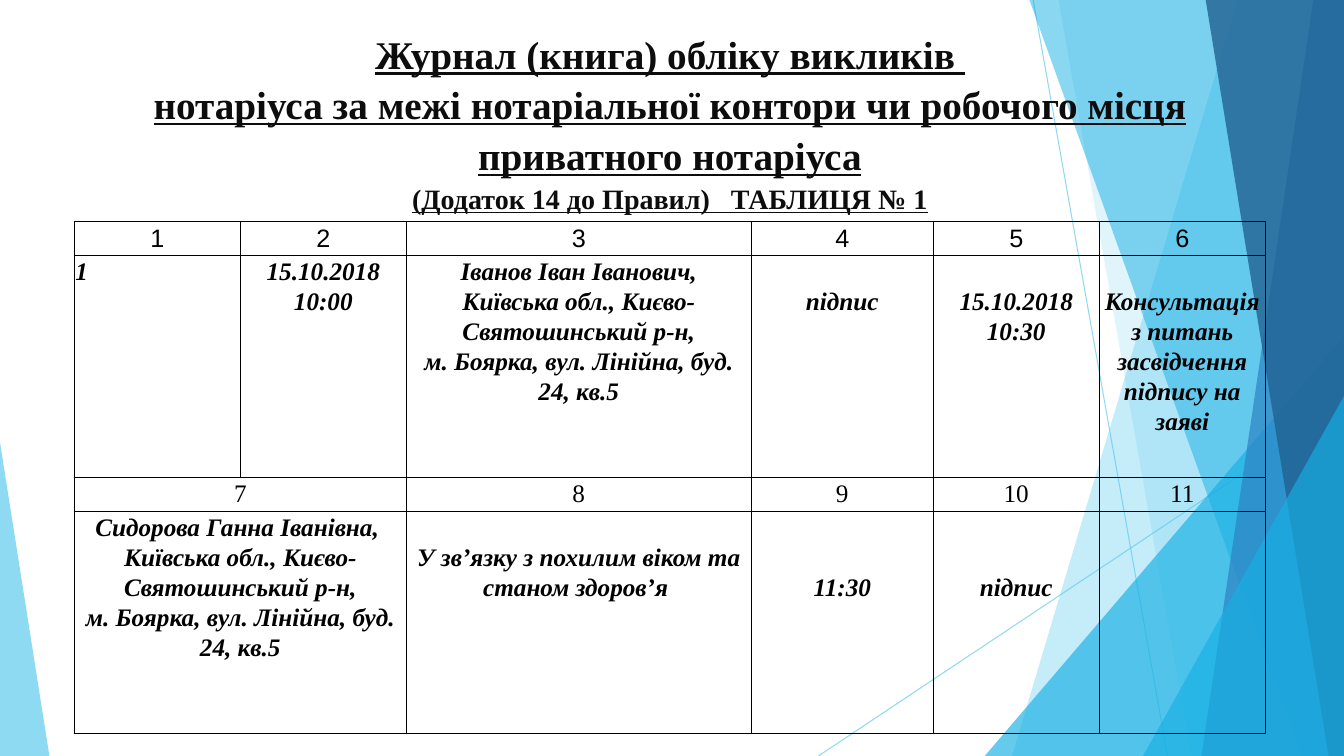
"""Build the notary call journal slide: a titled form table over layered facets."""
import dataclasses
import typing

import lxml.etree
import pptx
import pptx.dml.color
import pptx.enum.dml
import pptx.enum.shapes
import pptx.enum.text
import pptx.oxml.ns
import pptx.shapes.autoshape
import pptx.shapes.base
import pptx.slide
import pptx.table
import pptx.text.text
import pptx.util


@dataclasses.dataclass(frozen=True)
class Theme:
    ink: str = "000000"
    title_ink: str = "0D0D0D"
    sky: str = "5FCBEF"
    azure: str = "17B0E4"
    blue: str = "2E83C3"
    navy: str = "226292"
    serif: str = "Times New Roman"
    sans: str = "Arial"
    title_size: float = 28
    subtitle_size: float = 20
    cell_size: float = 18


class Ray(typing.NamedTuple):
    start: tuple[float, float]
    end: tuple[float, float]


class Facet(typing.NamedTuple):
    top_left: float
    bottom_left: float
    color: str
    opacity: int


class Corner(typing.NamedTuple):
    left: float
    top: float
    width: float
    apex: float
    color: str
    opacity: int


class Entry(typing.NamedTuple):
    row: int
    column: int
    text: str
    lines_above: int = 0


THEME = Theme()
PAGE_WIDTH, PAGE_HEIGHT = 960, 540
FACET_TOP = -0.72
TABLE_LEFT, TABLE_TOP = 53.1, 158.2
COLUMN_WIDTHS = (118.6, 118.6, 246.4, 130, 118.6, 118.6)
ROW_HEIGHTS = (24.3, 158.6) * 2
CELL_MARGIN = 0.72
CELL_LINE = 21.3

RAYS = [Ray((738, 0), (834, PAGE_HEIGHT)), Ray((PAGE_WIDTH, 290), (584.6, PAGE_HEIGHT))]
DECOR = [
    Facet(884.2, 722.9, THEME.sky, 36),
    Facet(756, 851, THEME.sky, 20),
    Corner(703.4, 240, 256.6, 1, THEME.azure, 66),
    Facet(735.1, 929.5, THEME.azure, 50),
    Facet(938.2, 858.2, THEME.blue, 70),
    Facet(861.1, 949, THEME.navy, 80),
    Corner(816.5, 283, 143.5, 1, THEME.azure, 66),
    Corner(0, 316, 35.3, 0, THEME.sky, 70),
]
TITLE = (
    "Журнал (книга) обліку викликів \n"
    "нотаріуса за межі нотаріальної контори чи робочого місця приватного нотаріуса\n"
    "(Додаток 14 до Правил)   ТАБЛИЦЯ № 1"
)
ADDRESS = "Київська обл., Києво-Святошинський р-н,\nм. Боярка, вул. Лінійна, буд. 24, кв.5"
HEADINGS = [Entry(0, column, str(column + 1)) for column in range(6)] + [
    Entry(2, column, str(number)) for column, number in zip((0, 2, 3, 4, 5), range(7, 12))
]
RECORDS = [
    Entry(1, 0, "1"),
    Entry(1, 1, "15.10.2018\n10:00"),
    Entry(1, 2, f"Іванов Іван Іванович,\n{ADDRESS}"),
    Entry(1, 3, "підпис", 1),
    Entry(1, 4, "15.10.2018\n10:30", 1),
    Entry(1, 5, "Консультація з питань засвідчення підпису на заяві", 1),
    Entry(3, 0, f"Сидорова Ганна Іванівна, \n{ADDRESS}"),
    Entry(3, 2, "У зв’язку з похилим віком та станом здоров’я ", 1),
    Entry(3, 3, "11:30", 2),
    Entry(3, 4, "підпис", 2),
]


def set_opacity(shape: pptx.shapes.base.BaseShape, percent: int) -> None:
    color = shape.element.spPr.find(".//" + pptx.oxml.ns.qn("a:srgbClr"))
    alpha = lxml.etree.SubElement(color, pptx.oxml.ns.qn("a:alpha"))
    alpha.set("val", str(percent * 1000))


def paint(shape: pptx.shapes.autoshape.Shape, color: str, opacity: int) -> None:
    shape.shadow.inherit = False
    shape.fill.solid()
    shape.fill.fore_color.rgb = pptx.dml.color.RGBColor.from_string(color)
    shape.line.fill.background()
    set_opacity(shape, opacity)


def draw_ray(page: pptx.slide.Slide, ray: Ray) -> None:
    ends = [pptx.util.Pt(value) for value in ray.start + ray.end]
    line = page.shapes.add_connector(pptx.enum.shapes.MSO_CONNECTOR.STRAIGHT, *ends)
    line.line.color.rgb = pptx.dml.color.RGBColor.from_string(THEME.sky)
    line.line.width = pptx.util.Pt(0.75)
    set_opacity(line, 70)
    lxml.etree.SubElement(line.element.spPr, pptx.oxml.ns.qn("a:effectLst"))


def draw_facet(page: pptx.slide.Slide, facet: Facet) -> None:
    outline = [(facet.top_left, FACET_TOP), (PAGE_WIDTH, FACET_TOP),
               (PAGE_WIDTH, PAGE_HEIGHT), (facet.bottom_left, PAGE_HEIGHT)]
    points = [(pptx.util.Pt(x), pptx.util.Pt(y)) for x, y in outline]
    builder = page.shapes.build_freeform(*points[0])
    builder.add_line_segments(points[1:], close=True)
    paint(builder.convert_to_shape(), facet.color, facet.opacity)


def draw_corner(page: pptx.slide.Slide, corner: Corner) -> None:
    shape = page.shapes.add_shape(
        pptx.enum.shapes.MSO_SHAPE.ISOSCELES_TRIANGLE,
        pptx.util.Pt(corner.left), pptx.util.Pt(corner.top),
        pptx.util.Pt(corner.width), pptx.util.Pt(PAGE_HEIGHT - corner.top))
    shape.adjustments[0] = corner.apex
    paint(shape, corner.color, corner.opacity)


def format_para(para: pptx.text.text._Paragraph, font_name: str, size: float,
                color: str, spacing: float) -> None:
    para.alignment = pptx.enum.text.PP_ALIGN.CENTER
    para.line_spacing = spacing
    for span in para.runs:
        span.font.name = font_name
        span.font.size = pptx.util.Pt(size)
        span.font.color.rgb = pptx.dml.color.RGBColor.from_string(color)


def fill_title(page: pptx.slide.Slide) -> None:
    box = page.shapes.title
    box.left, box.top = pptx.util.Pt(TABLE_LEFT), pptx.util.Pt(15.1)
    box.width, box.height = pptx.util.Pt(sum(COLUMN_WIDTHS)), pptx.util.Pt(154.8)
    frame = box.text_frame
    frame.text = TITLE
    frame.word_wrap = True
    frame.auto_size = pptx.enum.text.MSO_AUTO_SIZE.NONE
    frame.vertical_anchor = pptx.enum.text.MSO_ANCHOR.TOP
    sizes = (THEME.title_size, THEME.title_size, THEME.subtitle_size)
    for para, size in zip(frame.paragraphs, sizes):
        format_para(para, THEME.serif, size, THEME.title_ink, 1.08)
        for span in para.runs:
            span.font.bold = span.font.underline = True
    box.element.getparent().append(box.element)


def frame_cell(cell: pptx.table._Cell) -> None:
    cell.margin_left = cell.margin_right = pptx.util.Pt(CELL_MARGIN)
    cell.margin_top = cell.margin_bottom = pptx.util.Pt(CELL_MARGIN)
    properties = cell._tc.get_or_add_tcPr()
    for side in ("lnL", "lnR", "lnT", "lnB"):
        border = lxml.etree.SubElement(properties, pptx.oxml.ns.qn(f"a:{side}"))
        border.set("w", str(pptx.util.Pt(1)))
        fill = lxml.etree.SubElement(border, pptx.oxml.ns.qn("a:solidFill"))
        lxml.etree.SubElement(fill, pptx.oxml.ns.qn("a:srgbClr")).set("val", THEME.ink)
    cell.fill.background()


def write_entry(table: pptx.table.Table, entry: Entry, font_name: str, strong: bool) -> None:
    cell = table.cell(entry.row, entry.column)
    cell.text_frame.text = entry.text
    cell.margin_top = pptx.util.Pt(CELL_MARGIN + entry.lines_above * CELL_LINE)
    for para in cell.text_frame.paragraphs:
        format_para(para, font_name, THEME.cell_size, THEME.ink, 1.07)
        for span in para.runs:
            span.font.bold = span.font.italic = strong


def draw_table(page: pptx.slide.Slide) -> None:
    table = page.shapes.add_table(
        len(ROW_HEIGHTS), len(COLUMN_WIDTHS), pptx.util.Pt(TABLE_LEFT), pptx.util.Pt(TABLE_TOP),
        pptx.util.Pt(sum(COLUMN_WIDTHS)), pptx.util.Pt(sum(ROW_HEIGHTS))).table
    table.first_row = table.horz_banding = False
    for column, width in zip(table.columns, COLUMN_WIDTHS):
        column.width = pptx.util.Pt(width)
    for row, height in zip(table.rows, ROW_HEIGHTS):
        row.height = pptx.util.Pt(height)
    for cell in table.iter_cells():
        frame_cell(cell)
    for row in (2, 3):
        table.cell(row, 0).merge(table.cell(row, 1))
    for entry in HEADINGS:
        write_entry(table, entry, THEME.serif if entry.row else THEME.sans, False)
    for entry in RECORDS:
        write_entry(table, entry, THEME.serif, True)
    table.cell(1, 0).text_frame.paragraphs[0].alignment = pptx.enum.text.PP_ALIGN.LEFT


def main() -> None:
    deck = pptx.Presentation()
    deck.slide_width, deck.slide_height = pptx.util.Pt(PAGE_WIDTH), pptx.util.Pt(PAGE_HEIGHT)
    page = deck.slides.add_slide(deck.slide_layouts.get_by_name("Title Only"))
    for ray in RAYS:
        draw_ray(page, ray)
    for piece in DECOR:
        if isinstance(piece, Facet):
            draw_facet(page, piece)
        else:
            draw_corner(page, piece)
    fill_title(page)
    draw_table(page)
    deck.save("out.pptx")


if __name__ == "__main__":
    main()
